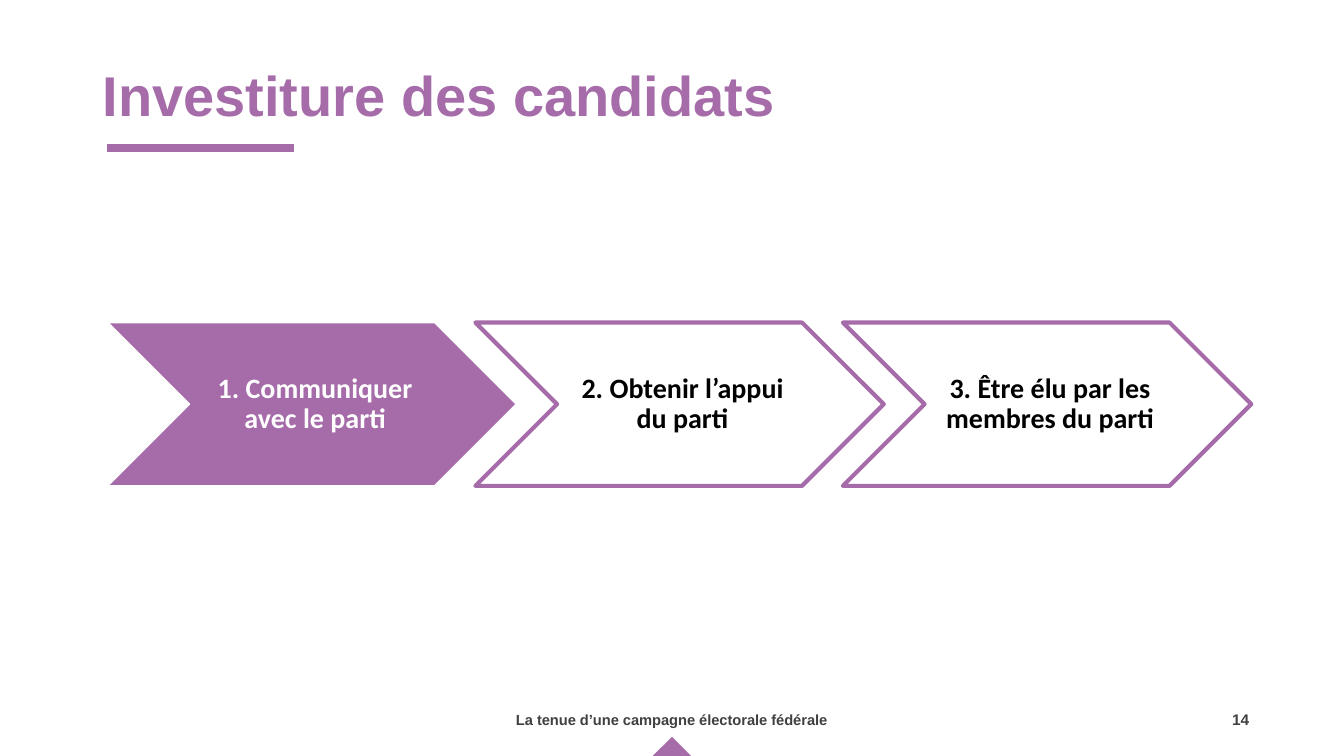
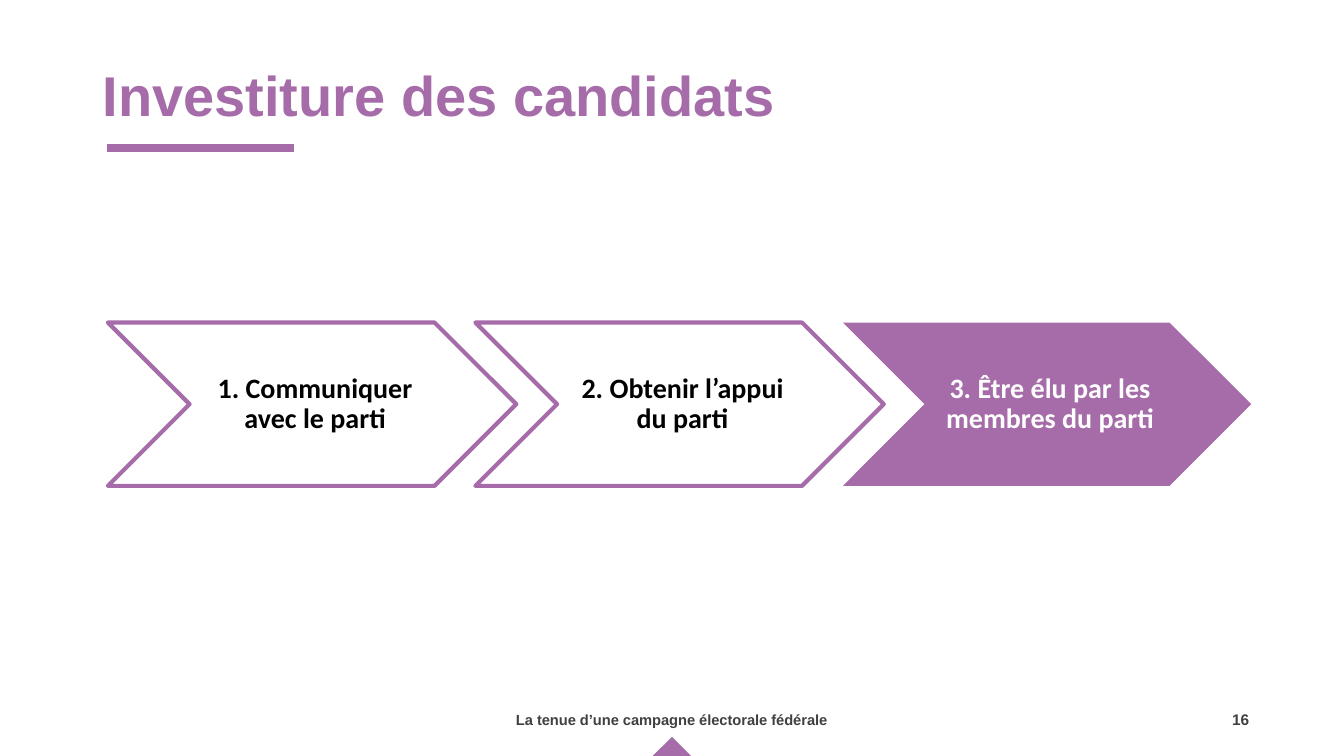
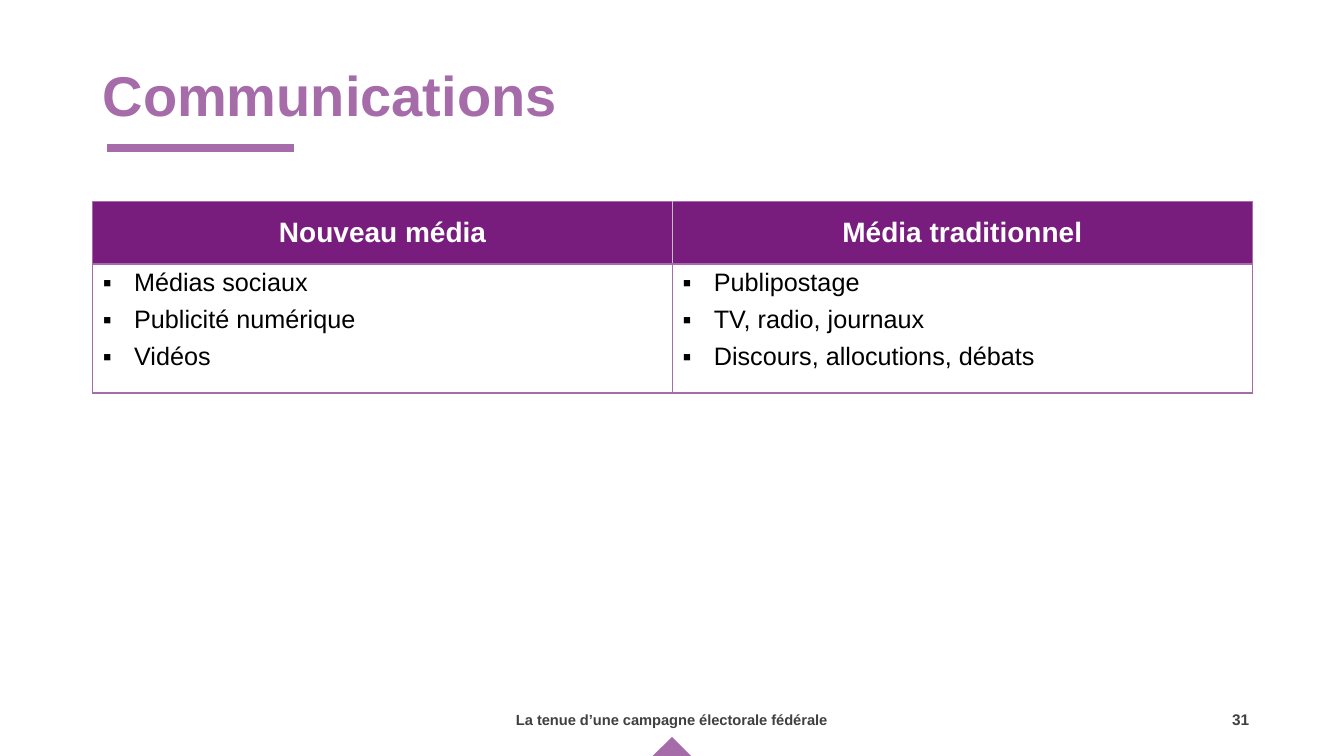
from lxml import etree
from pptx import Presentation
from pptx.dml.color import RGBColor
from pptx.enum.shapes import MSO_CONNECTOR, MSO_SHAPE
from pptx.enum.text import MSO_ANCHOR, PP_ALIGN
from pptx.oxml.ns import qn
from pptx.util import Inches, Pt

# Content
FOOTER = "La tenue d’une campagne électorale fédérale"
STEPS = [
    "1. Communiquer avec le parti",
    "2. Obtenir l’appui du parti",
    "3. Être élu par les membres du parti",
]
NOMINATION_TITLE = "Investiture des candidats"
NOMINATION_SLIDES = [(14, 0), (16, 2)]  # slide number, active step
MEDIA_TITLE = "Communications"
MEDIA_NUMBER = 31
MEDIA = {
    "Nouveau média": ["Médias sociaux", "Publicité numérique", "Vidéos"],
    "Média traditionnel": [
        "Publipostage",
        "TV, radio, journaux",
        "Discours, allocutions, débats",
    ],
}

# Style
LILAC = RGBColor(0xA6, 0x6B, 0xA9)
PURPLE = RGBColor(0x78, 0x1D, 0x7D)
DARK_GREY = RGBColor(0x40, 0x40, 0x40)
LIGHT_GREY = RGBColor(0xBF, 0xBF, 0xBF)
WHITE = RGBColor(0xFF, 0xFF, 0xFF)
BLACK = RGBColor(0, 0, 0)
HEADING_FONT = "Arial"
STEP_FONT = "Calibri"
LEFT, CENTER = PP_ALIGN.LEFT, PP_ALIGN.CENTER
TOP, MIDDLE = MSO_ANCHOR.TOP, MSO_ANCHOR.MIDDLE

# Layout, in inches
SLIDE_WIDTH, SLIDE_HEIGHT = 13.33, 7.5
MARGIN, CONTENT_WIDTH = 0.92, 11.5
STEP_LEFT, STEP_TOP, STEP_WIDTH, STEP_HEIGHT = 1.07, 3.2, 4.05, 1.62
STEP_PITCH = 0.9 * STEP_WIDTH
TABLE_TOP, ROW_HEIGHTS = 2, (0.62, 1.28)
BULLET_INDENT = 0.31


def add_run(paragraph, text, size, color, bold=True, font=HEADING_FONT):
    run = paragraph.add_run()
    run.text = text
    run.font.name = font
    run.font.size = Pt(size)
    run.font.bold = bold
    run.font.color.rgb = color


def add_text(slide, box, text, size, color, align=LEFT, anchor=MIDDLE):
    frame = slide.shapes.add_textbox(*map(Inches, box)).text_frame
    frame.word_wrap = True
    frame.vertical_anchor = anchor
    paragraph = frame.paragraphs[0]
    paragraph.alignment = align
    add_run(paragraph, text, size, color)
    return paragraph


def add_preset(slide, preset, box, fill=None):
    """Add a shape without shadow or outline, filled only if a colour is given."""
    shape = slide.shapes.add_shape(preset, *map(Inches, box))
    shape.shadow.inherit = False
    shape.line.fill.background()
    if fill is None:
        shape.fill.background()
    else:
        shape.fill.solid()
        shape.fill.fore_color.rgb = fill
    return shape


def add_base_slide(presentation, title, number):
    """Add a slide with the shared title, rule, footer and page number."""
    slide = presentation.slides.add_slide(presentation.slide_layouts[6])
    add_text(slide, (11.85, 7, 0.91, 0.29), str(number), 11, DARK_GREY, CENTER, TOP)
    footer_width = 4.5
    footer_box = ((SLIDE_WIDTH - footer_width) / 2, 6.94, footer_width, 0.4)
    add_text(slide, footer_box, FOOTER, 10.5, DARK_GREY, CENTER)
    marker_width = 0.4
    marker_box = ((SLIDE_WIDTH - marker_width) / 2, 7.31, marker_width, 0.2)
    add_preset(slide, MSO_SHAPE.ISOSCELES_TRIANGLE, marker_box, LILAC)

    rule = slide.shapes.add_connector(
        MSO_CONNECTOR.STRAIGHT, *map(Inches, (1.06, 1.47, 2.92, 1.47)))
    rule.line.color.rgb = LILAC
    rule.line.width = Pt(6)
    etree.SubElement(rule._element.spPr, qn("a:effectLst"))

    heading = add_text(slide, (MARGIN, 0.4, CONTENT_WIDTH, 1.15), title, 40, LILAC)
    heading.line_spacing = 0.9
    return slide


def add_steps(slide, active):
    for index, step in enumerate(STEPS):
        is_active = index == active
        box = (STEP_LEFT + index * STEP_PITCH, STEP_TOP, STEP_WIDTH, STEP_HEIGHT)
        chevron = add_preset(slide, MSO_SHAPE.CHEVRON, box, LILAC if is_active else None)
        if not is_active:
            chevron.line.color.rgb = LILAC
            chevron.line.width = Pt(3)
        elif index == 0:
            chevron.line.color.rgb = WHITE
            chevron.line.width = Pt(1)
        frame = chevron.text_frame
        frame.word_wrap = True
        frame.vertical_anchor = MIDDLE
        frame.margin_left = Inches(0.09)
        frame.margin_right = frame.margin_top = frame.margin_bottom = Inches(0.03)
        paragraph = frame.paragraphs[0]
        paragraph.alignment = CENTER
        paragraph.line_spacing = 0.9
        add_run(paragraph, step, 20, WHITE if is_active else BLACK, font=STEP_FONT)


def set_borders(cell, inner_side=None):
    """Outline a cell in lilac, with a thin grey line on its inner side."""
    properties = cell._tc.get_or_add_tcPr()
    for position, side in enumerate("LRTB"):
        color, width = (LIGHT_GREY, 0.75) if side == inner_side else (LILAC, 1)
        line = etree.Element(qn(f"a:ln{side}"), w=str(Pt(width)))
        fill = etree.SubElement(line, qn("a:solidFill"))
        etree.SubElement(fill, qn("a:srgbClr"), val=str(color))
        properties.insert(position, line)


def add_bullet(paragraph):
    properties = paragraph._p.get_or_add_pPr()
    properties.set("marL", str(Inches(BULLET_INDENT)))
    properties.set("indent", str(-Inches(BULLET_INDENT)))
    etree.SubElement(properties, qn("a:buFont"), typeface=HEADING_FONT)
    etree.SubElement(properties, qn("a:buChar"), char="▪")


def add_media_table(slide):
    box = (MARGIN, TABLE_TOP, CONTENT_WIDTH, sum(ROW_HEIGHTS))
    table = slide.shapes.add_table(
        len(ROW_HEIGHTS), len(MEDIA), *map(Inches, box)).table
    table.first_row = table.horz_banding = False
    for row, height in zip(table.rows, ROW_HEIGHTS):
        row.height = Inches(height)

    for column, (heading, items) in enumerate(MEDIA.items()):
        table.columns[column].width = Inches(CONTENT_WIDTH / len(MEDIA))
        header, body = table.cell(0, column), table.cell(1, column)

        set_borders(header, inner_side="RL"[column])
        header.fill.solid()
        header.fill.fore_color.rgb = PURPLE
        header.vertical_anchor = MIDDLE
        paragraph = header.text_frame.paragraphs[0]
        paragraph.alignment = CENTER
        add_run(paragraph, heading, 20, WHITE)

        set_borders(body)
        body.fill.background()
        frame = body.text_frame
        for index, item in enumerate(items):
            paragraph = frame.add_paragraph() if index else frame.paragraphs[0]
            paragraph.space_after = Pt(6)
            add_bullet(paragraph)
            add_run(paragraph, item, 18, BLACK, bold=False)


def main():
    presentation = Presentation()
    presentation.slide_width = Inches(SLIDE_WIDTH)
    presentation.slide_height = Inches(SLIDE_HEIGHT)
    for number, active in NOMINATION_SLIDES:
        add_steps(add_base_slide(presentation, NOMINATION_TITLE, number), active)
    add_media_table(add_base_slide(presentation, MEDIA_TITLE, MEDIA_NUMBER))
    presentation.save("out.pptx")


if __name__ == "__main__":
    main()
